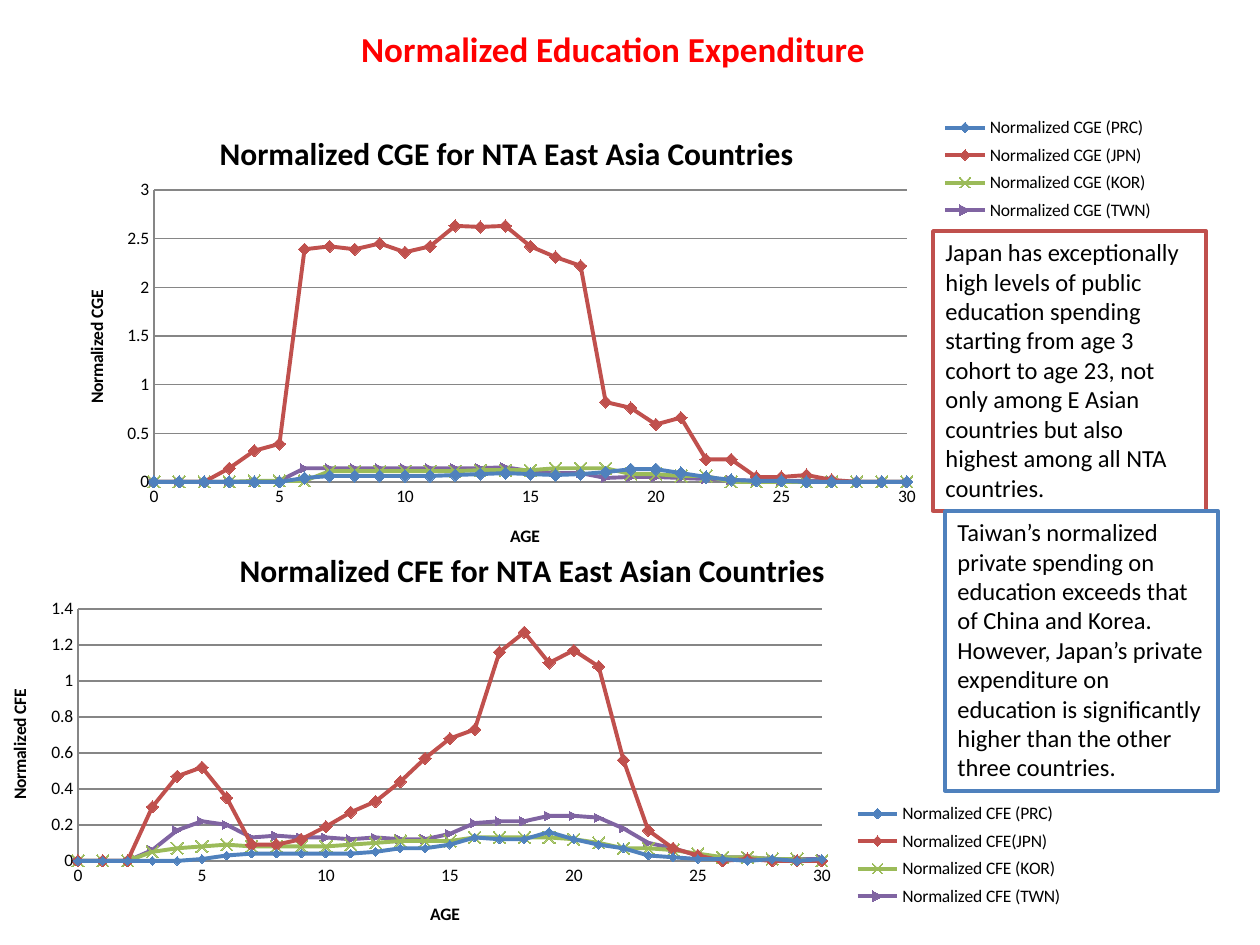
import pptx
import pptx.chart.data
import pptx.dml.color
import pptx.enum.chart
import pptx.enum.text
import pptx.oxml
import pptx.oxml.ns
import pptx.util

RGB = pptx.dml.color.RGBColor
BLACK = RGB(0x00, 0x00, 0x00)
WHITE = RGB(0xFF, 0xFF, 0xFF)
RED = RGB(0xFF, 0x00, 0x00)
GREY = RGB(0x86, 0x86, 0x86)
BLUE = RGB(0x4F, 0x81, 0xBD)
BRICK = RGB(0xC0, 0x50, 0x4D)
GREEN = RGB(0x9B, 0xBB, 0x59)
PURPLE = RGB(0x80, 0x64, 0xA2)

FONT = "Calibri"
SCALE = 914400 // 126
MARK = pptx.enum.chart.XL_MARKER_STYLE
AGES = range(31)
HUES = (BLUE, BRICK, GREEN, PURPLE)

CGE = {
    "Normalized CGE (PRC)": [
        0, 0, 0, 0, 0, 0, 0.04, 0.06, 0.06, 0.06, 0.06, 0.06, 0.07, 0.08, 0.09, 0.08,
        0.07, 0.08, 0.1, 0.13, 0.13, 0.09, 0.05, 0.02, 0.01, 0.01, 0, 0, 0, 0, 0],
    "Normalized CGE (JPN)": [
        0, 0, 0, 0.14, 0.32, 0.39, 2.39, 2.42, 2.39, 2.45, 2.36, 2.42, 2.63, 2.62, 2.63, 2.42,
        2.31, 2.22, 0.82, 0.76, 0.59, 0.66, 0.23, 0.23, 0.05, 0.05, 0.07, 0.02, 0, 0, 0],
    "Normalized CGE (KOR)": [
        0, 0, 0, 0, 0.01, 0.01, 0.01, 0.11, 0.11, 0.11, 0.11, 0.11, 0.11, 0.12, 0.12, 0.12,
        0.14, 0.14, 0.14, 0.08, 0.08, 0.06, 0.06, 0, 0, 0, 0, 0, 0, 0, 0],
    "Normalized CGE (TWN)": [
        0, 0, 0, 0, 0, 0.01, 0.14, 0.14, 0.14, 0.14, 0.14, 0.14, 0.14, 0.14, 0.15, 0.11,
        0.09, 0.09, 0.04, 0.05, 0.05, 0.04, 0.03, 0.02, 0.01, 0.01, 0.01, 0.01, 0, 0, 0],
}
CFE = {
    "Normalized CFE (PRC)": [
        0, 0, 0, 0, 0, 0.01, 0.03, 0.04, 0.04, 0.04, 0.04, 0.04, 0.05, 0.07, 0.07, 0.09,
        0.13, 0.12, 0.12, 0.16, 0.12, 0.09, 0.07, 0.03, 0.02, 0.01, 0.01, 0, 0.01, 0, 0.01],
    "Normalized CFE(JPN)": [
        0, 0, 0, 0.3, 0.47, 0.52, 0.35, 0.09, 0.09, 0.12, 0.19, 0.27, 0.33, 0.44, 0.57, 0.68,
        0.73, 1.16, 1.27, 1.1, 1.17, 1.08, 0.56, 0.17, 0.07, 0.03, 0, 0.01, 0, 0, 0],
    "Normalized CFE (KOR)": [
        0, 0, 0, 0.05, 0.07, 0.08, 0.09, 0.08, 0.08, 0.08, 0.08, 0.09, 0.1, 0.11, 0.11, 0.11,
        0.13, 0.13, 0.13, 0.13, 0.12, 0.1, 0.07, 0.07, 0.06, 0.04, 0.02, 0.02, 0.01, 0.01, 0],
    "Normalized CFE (TWN)": [
        0, 0, 0, 0.06, 0.17, 0.22, 0.2, 0.13, 0.14, 0.13, 0.13, 0.12, 0.13, 0.12, 0.12, 0.15,
        0.21, 0.22, 0.22, 0.25, 0.25, 0.24, 0.18, 0.1, 0.07, 0.03, 0.02, 0.02, 0.01, 0.01, 0.01],
}


def px(*nums):
    return [pptx.util.Emu(num * SCALE) for num in nums]


def write(frame, text, size=10, bold=False, color=BLACK, align=None):
    para = frame.paragraphs[0]
    para.alignment = align
    run = para.add_run()
    run.text = text
    font = run.font
    font.name, font.size, font.bold = FONT, pptx.util.Pt(size), bold
    font.color.rgb = color


def add_box(slide, rect, text, edge=None, **style):
    box = slide.shapes.add_textbox(*px(*rect))
    box.text_frame.word_wrap = True
    if edge is not None:
        box.fill.solid()
        box.fill.fore_color.rgb = WHITE
        box.line.color.rgb = edge
        box.line.width = pptx.util.Pt(2)
    write(box.text_frame, text, **style)


def place(node, index, frame, left, top, width=None, height=None, inner=False):
    for old in node.xpath("c:layout"):
        node.remove(old)
    parts = [("xMode", "edge"), ("yMode", "edge"),
             ("x", (left - frame[0]) / frame[2]), ("y", (top - frame[1]) / frame[3])]
    if width:
        parts += [("w", width / frame[2]), ("h", height / frame[3])]
    if inner:
        parts.insert(0, ("layoutTarget", "inner"))
    body = "".join(f'<c:{tag} val="{val}"/>' for tag, val in parts)
    space = pptx.oxml.ns.nsdecls("c")
    node.insert(index, pptx.oxml.parse_xml(
        f"<c:layout {space}><c:manualLayout>{body}</c:manualLayout></c:layout>"))


def set_title(title, frame, spot, text, size=10, turn=False):
    write(title.text_frame, text, size=size, bold=True)
    if turn:
        body = title.text_frame._txBody.bodyPr
        body.set("rot", "-5400000")
        body.set("vert", "horz")
    place(title._element, 1, frame, *spot)


def set_axis(axis, top, step):
    axis.minimum_scale, axis.maximum_scale, axis.major_unit = 0, top, step
    axis.major_tick_mark = axis.minor_tick_mark = pptx.enum.chart.XL_TICK_MARK.NONE
    axis.tick_labels.number_format = "General"
    axis.tick_labels.number_format_is_linked = False
    axis.format.line.color.rgb = GREY
    axis.format.line.width = pptx.util.Pt(0.75)


def style_line(line, hue, mark):
    line.smooth = True
    line.format.line.color.rgb = hue
    line.format.line.width = pptx.util.Pt(2.25)
    if mark is not None:
        line.marker.style, line.marker.size = mark, 7
        line.marker.format.fill.solid()
        line.marker.format.fill.fore_color.rgb = hue
        line.marker.format.line.color.rgb = hue


def add_curves(slide, rect, rows, title, label, scale, grid, marks, spots):
    data = pptx.chart.data.XyChartData()
    for name, vals in rows.items():
        line = data.add_series(name)
        for age, val in zip(AGES, vals):
            line.add_data_point(age, val)
    kind = pptx.enum.chart.XL_CHART_TYPE.XY_SCATTER_SMOOTH
    chart = slide.shapes.add_chart(kind, *px(*rect), data).chart
    chart.font.name, chart.font.size = FONT, pptx.util.Pt(10)
    chart.font.color.rgb = BLACK
    root = chart._chartSpace
    root.xpath("c:chart")[0].addnext(pptx.oxml.parse_xml(
        f'<c:spPr {pptx.oxml.ns.nsdecls("c", "a")}><a:noFill/><a:ln><a:noFill/></a:ln></c:spPr>'))

    across, upright = chart.category_axis, chart.value_axis
    set_axis(across, 30, 5)
    set_axis(upright, *scale)
    across.has_major_gridlines = False
    upright.has_major_gridlines = True
    rule = upright.major_gridlines.format.line
    rule.color.rgb, rule.width = GREY, pptx.util.Pt(grid)

    chart.has_title = True
    set_title(chart.chart_title, rect, spots["title"], title, size=18)
    set_title(across.axis_title, rect, spots["age"], "AGE")
    set_title(upright.axis_title, rect, spots["label"], label, turn=True)

    chart.has_legend = True
    chart.legend.position = pptx.enum.chart.XL_LEGEND_POSITION.RIGHT
    chart.legend.include_in_layout = False
    place(chart.legend._element, 1, rect, *spots["key"])
    place(root.xpath("c:chart/c:plotArea")[0], 0, rect, *spots["plot"], inner=True)

    plot = chart.plots[0]
    plot.vary_by_categories = False
    for line, hue, mark in zip(plot.series, HUES, marks):
        style_line(line, hue, mark)


def main():
    deck = pptx.Presentation()
    deck.slide_width, deck.slide_height = px(1260, 945)
    slide = deck.slides.add_slide(deck.slide_layouts[6])
    add_curves(slide, (53, 105, 1113, 462), CGE,
               "Normalized CGE for NTA East Asia Countries", "Normalized CGE",
               (3, 0.5), 0.75, (MARK.DIAMOND, MARK.DIAMOND, MARK.X, None),
               {"title": (214, 126), "age": (507, 521), "label": (82, 287),
                "key": (938, 110, 220, 118), "plot": (154, 190, 753, 292)})
    add_curves(slide, (-25, 525, 1102, 420), CFE,
               "Normalized CFE for NTA East Asian Countries", "Normalized CFE",
               (1.4, 0.2), 1, (None, MARK.DIAMOND, MARK.X, None),
               {"title": (234, 543), "age": (427, 899), "label": (5, 686),
                "key": (849, 796, 220, 118), "plot": (78, 609, 744, 252)})
    add_box(slide, (156, 21, 914, 55), "Normalized Education Expenditure",
            size=20, bold=True, color=RED, align=pptx.enum.text.PP_ALIGN.CENTER)
    add_box(slide, (933, 231, 273, 280),
            "Japan has exceptionally high levels of public education spending starting from "
            "age 3 cohort to age 23, not only among E Asian countries but also highest among "
            "all NTA countries.", edge=BRICK, size=14)
    add_box(slide, (945, 511, 273, 280),
            "Taiwan’s normalized private spending on education exceeds that of China and "
            "Korea. However, Japan’s private expenditure on education is significantly higher "
            "than the other three countries.", edge=BLUE, size=14)
    deck.save("out.pptx")


if __name__ == "__main__":
    main()
